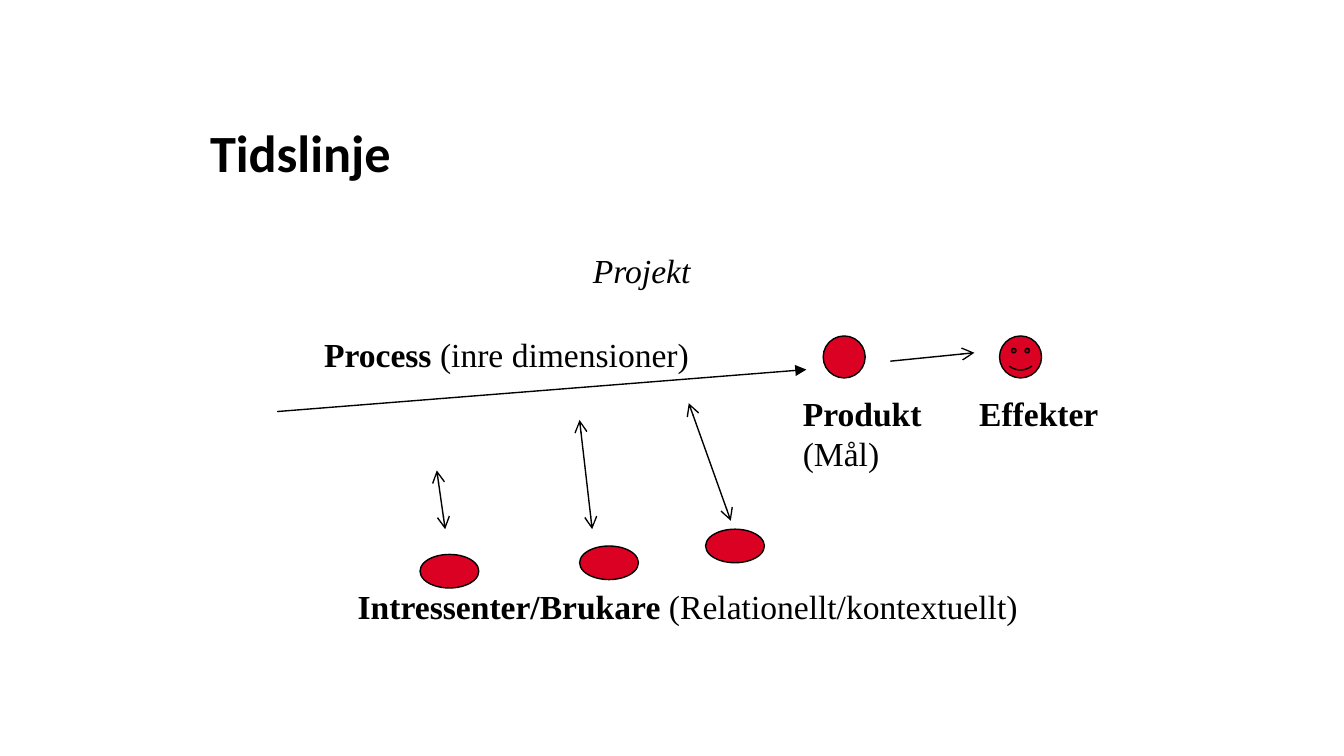
from dataclasses import dataclass

from lxml import etree
from pptx import Presentation
from pptx import util as u
from pptx.dml.color import RGBColor
from pptx.enum import shapes, text
from pptx.oxml import ns

BLACK = RGBColor(0x00, 0x00, 0x00)
RED = RGBColor(0xDA, 0x01, 0x23)
WHITE = RGBColor(0xFF, 0xFF, 0xFF)

UNIT = u.Inches(1 / 16)  # the slide is a grid of 160 columns by 90 rows
COLUMNS, ROWS = 160, 90
LINE_HEIGHT = 6.4
LABEL_FONT = {"name": "Times New Roman", "size": u.Pt(18)}
TITLE_FONT = {"name": "Calibri", "size": u.Pt(28), "bold": True}
BOLD, ITALIC, PLAIN = {"bold": True}, {"italic": True}, {"bold": False}


@dataclass
class Box:
    """A region of the grid; positions inside it count from its top left."""
    column: float
    row: float
    width: float
    height: float

    def place(self, column, row):
        return int((self.column + column) * UNIT), int((self.row + row) * UNIT)


def size(width, height):
    return int(width * UNIT), int(height * UNIT)


def set_font(font, **values):
    for name, value in values.items():
        setattr(font, name, value)
    font.color.rgb = BLACK


def set_outline(line):
    line.color.rgb = BLACK
    line.width = u.Pt(0.75)


def add_label(slide, box, at, width, runs, height=LINE_HEIGHT, wrap=False):
    frame = slide.shapes.add_textbox(*box.place(*at), *size(width, height)).text_frame
    frame.word_wrap = wrap
    frame.auto_size = text.MSO_AUTO_SIZE.SHAPE_TO_FIT_TEXT
    for words, style in runs:
        run = frame.paragraphs[0].add_run()
        run.text = words
        set_font(run.font, **LABEL_FONT, **style)


def add_marker(slide, box, at, width, height, kind=shapes.MSO_SHAPE.OVAL):
    marker = slide.shapes.add_shape(kind, *box.place(*at), *size(width, height))
    marker.shadow.inherit = False
    marker.fill.solid()
    marker.fill.fore_color.rgb = RED
    set_outline(marker.line)


def add_arrow(slide, box, start, end, **ends):
    """Draw a line; ends maps headEnd and tailEnd to arrowhead types."""
    arrow = slide.shapes.add_connector(
        shapes.MSO_CONNECTOR.STRAIGHT, *box.place(*start), *box.place(*end))
    set_outline(arrow.line)
    outline = arrow.line._get_or_add_ln()
    for tag, kind in ends.items():
        etree.SubElement(outline, ns.qn(f"a:{tag}"), type=kind)
    etree.SubElement(arrow._element.spPr, ns.qn("a:effectLst"))


def add_title(slide, box):
    title = slide.shapes.title
    title.left, title.top = box.place(0, 0)
    title.width, title.height = size(box.width, box.height)
    frame = title.text_frame
    frame.auto_size = text.MSO_AUTO_SIZE.NONE
    frame.vertical_anchor = text.MSO_ANCHOR.MIDDLE
    frame.text = "Tidslinje"
    paragraph = frame.paragraphs[0]
    paragraph.alignment = text.PP_ALIGN.LEFT
    set_font(paragraph.runs[0].font, **TITLE_FONT)


def add_process(slide, box):
    add_arrow(slide, box, (0, box.height), (box.width, box.height - 5),
              tailEnd="triangle")
    add_label(slide, box, (36, 0), 15, [("Projekt", ITALIC)])
    add_label(slide, box, (4, 10), 49,
              [("Process", BOLD), (" (inre dimensioner)", PLAIN)], wrap=True)


def add_outcomes(slide, box):
    effect_column = 21
    add_label(slide, box, (0, 6), 19, [("Produkt ", BOLD), ("(Mål)", PLAIN)],
              height=box.height - 6, wrap=True)
    add_label(slide, box, (effect_column, 6), 17.6, [("Effekter", BOLD)])
    add_marker(slide, box, (4, 0), 5, 5)
    add_marker(slide, box, (effect_column + 4, 0), 5, 5,
               shapes.MSO_SHAPE.SMILEY_FACE)
    add_arrow(slide, box, (12, 3), (22, 2), tailEnd="arrow")


def add_stakeholders(slide, box):
    add_label(slide, box, (0, box.height - LINE_HEIGHT), box.width,
              [("Intressenter/Brukare", BOLD),
               (" (Relationellt/kontextuellt)", PLAIN)])
    for marker, start, end in (
        ((9, 18), (12, 15), (11, 8)),
        ((28, 17), (29.5, 15), (28, 2)),
        ((43, 15), (46, 14), (41, 0)),
    ):
        add_marker(slide, box, marker, 7, 4)
        add_arrow(slide, box, start, end, headEnd="arrow", tailEnd="arrow")


def main():
    presentation = Presentation()
    presentation.slide_width, presentation.slide_height = size(COLUMNS, ROWS)
    slide = presentation.slides.add_slide(presentation.slide_layouts[5])
    slide.background.fill.solid()
    slide.background.fill.fore_color.rgb = WHITE
    add_title(slide, Box(23.4, 10.5, 113.4, 15))
    add_process(slide, Box(33, 29, 63, 20))
    add_outcomes(slide, Box(94, 40, 38.6, 17.4))
    add_stakeholders(slide, Box(41, 48, 82.5, 27.4))
    presentation.save("out.pptx")


if __name__ == "__main__":
    main()
